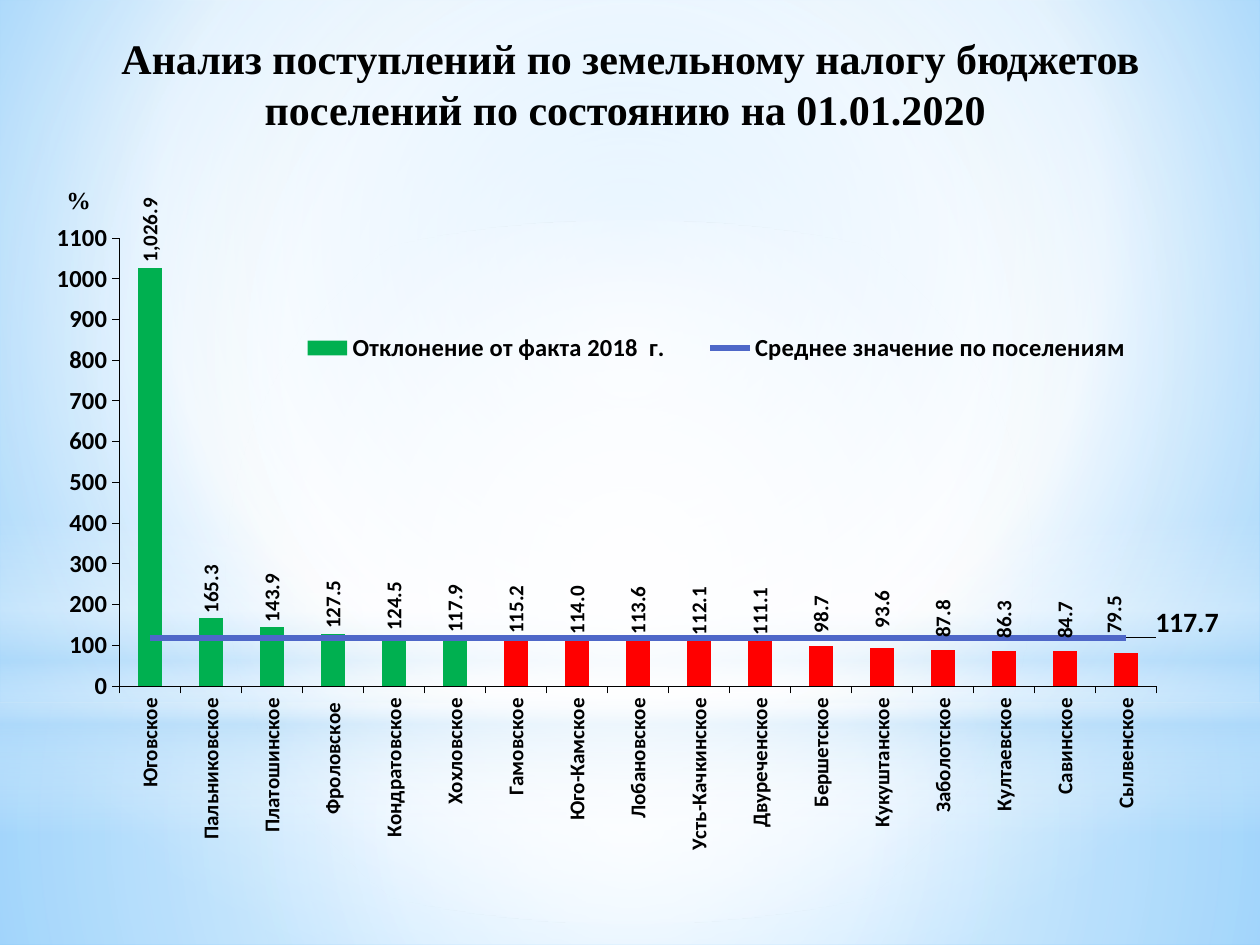
"""Build the slide on land tax receipts of settlement budgets."""
from copy import deepcopy
from dataclasses import dataclass

from lxml import etree
from pptx import Presentation
from pptx import util as u
from pptx.chart import data
from pptx.dml.color import RGBColor
from pptx.enum import chart as ch, shapes, text
from pptx.oxml import parse_xml
from pptx.oxml.ns import nsdecls, qn


@dataclass(frozen=True)
class Theme:
    ink: str = "000000"
    good: str = "00B050"
    bad: str = "FF0000"
    mean: str = "4E67C8"
    sky: str = "B4DCFA"
    white: str = "FFFFFF"
    edge: str = "9ED5FF"
    deep: str = "5BB9FF"
    serif: str = "Times New Roman"
    sans: str = "Calibri"
    head: int = 24
    big: int = 16
    mid: int = 14
    small: int = 12


T = Theme()
MEAN = 117.7
RATES = {
    "Юговское": 1026.9, "Пальниковское": 165.3, "Платошинское": 143.9,
    "Фроловское ": 127.5, "Кондратовское": 124.5, "Хохловское": 117.9,
    "Гамовское": 115.2, "Юго-Камское": 114, "Лобановское": 113.6,
    "Усть-Качкинское": 112.1, "Двуреченское": 111.1, "Бершетское": 98.7,
    "Кукуштанское": 93.6, "Заболотское": 87.8, "Култаевское": 86.3,
    "Савинское": 84.7, "Сылвенское": 79.5,
}
SHIFTS = {11: (0, -0.01), 12: (0, -0.02), 13: (0, -0.01), 14: (0, -0.01),
          15: (0, -0.01), 16: (-0.01, -0.02)}


def style(font, size, name=T.sans):
    font.size, font.name, font.bold = u.Pt(size), name, True
    font.color.rgb = RGBColor.from_string(T.ink)


def write(frame, words, size, name=T.serif, align=text.PP_ALIGN.LEFT):
    frame.word_wrap = True
    frame.vertical_anchor = text.MSO_ANCHOR.TOP
    frame.auto_size = text.MSO_AUTO_SIZE.NONE
    para = frame.paragraphs[0]
    para.alignment = align
    run = para.add_run()
    run.text = words
    style(run.font, size, name)


def blend(root, stops, focus=(50, 50, 50, 50), angle=None):
    """Swap the solid fill under root for a gradient of (place, colour, alpha)."""
    marks = "".join(
        f'<a:gs pos="{pos * 1000}"><a:srgbClr val="{tone}">'
        f'<a:alpha val="{alpha * 1000}"/></a:srgbClr></a:gs>'
        for pos, tone, alpha in stops)
    if angle is None:
        rect = " ".join(f'{k}="{v * 1000}"' for k, v in zip("ltrb", focus))
        way = f'<a:path path="circle"><a:fillToRect {rect}/></a:path>'
    else:
        way = f'<a:lin ang="{angle * 60000}" scaled="0"/>'
    old = next(root.iter(qn("a:solidFill")))
    old.getparent().replace(old, parse_xml(
        f'<a:gradFill {nsdecls("a")} rotWithShape="1">'
        f'<a:gsLst>{marks}</a:gsLst>{way}</a:gradFill>'))


def layout(x, y, w=None, h=None, inner=False):
    """Return a manual chart layout, or a plain offset when no size is given."""
    parts = '<c:layoutTarget val="inner"/>' if inner else ""
    if w:
        parts += '<c:xMode val="edge"/><c:yMode val="edge"/>'
    parts += f'<c:x val="{x}"/><c:y val="{y}"/>'
    if w:
        parts += f'<c:w val="{w}"/><c:h val="{h}"/>'
    return parse_xml(f'<c:layout {nsdecls("c")}><c:manualLayout>{parts}'
                     '</c:manualLayout></c:layout>')


def turn(root):
    body = next(root.iter(qn("a:bodyPr")))
    body.set("rot", "-5400000")
    body.set("vert", "horz")


def clear(root, tag):
    for old in root.findall(qn(tag)):
        root.remove(old)


def shift(ser, moves):
    """Give single labels of a series their own offset."""
    base = ser.find(qn("c:dLbls"))
    kids = [k for k in base if k.tag != qn("c:showLeaderLines")]
    for rank, (spot, move) in enumerate(moves.items()):
        label = parse_xml(f'<c:dLbl {nsdecls("c")}><c:idx val="{spot}"/></c:dLbl>')
        label.append(layout(*move))
        label.extend([deepcopy(k) for k in kids])
        base.insert(rank, label)


def split(area):
    """Move the second bar series to a line plot on the same axes."""
    bars = area.find(qn("c:barChart"))
    ser = bars.findall(qn("c:ser"))[1]
    clear(ser, "c:invertIfNegative")
    line = parse_xml(f'<c:lineChart {nsdecls("c")}><c:grouping val="standard"/>'
                     '<c:varyColors val="0"/></c:lineChart>')
    line.append(ser)
    etree.SubElement(line, qn("c:marker")).set("val", "1")
    line.extend([deepcopy(a) for a in bars.findall(qn("c:axId"))])
    bars.addnext(line)


class Deck:
    """Hold the style and the current slide."""

    def __init__(self, theme):
        self.t = theme
        self.prs = Presentation()
        self.prs.slide_width, self.prs.slide_height = u.Cm(25.4), u.Cm(19.05)
        self.page = self.prs.slides.add_slide(self.prs.slide_layouts[5])

    def ground(self, stops, focus):
        self.page.background.fill.solid()
        self.page.background.fill.fore_color.rgb = RGBColor.from_string(self.t.white)
        blend(self.page.element, stops, focus)

    def glow(self, kind, top, high, stops, angle=None):
        shape = self.page.shapes.add_shape(
            kind, 0, u.Cm(top), self.prs.slide_width, u.Cm(high))
        shape.shadow.inherit = False
        shape.line.fill.background()
        shape.fill.solid()
        shape.fill.fore_color.rgb = RGBColor.from_string(self.t.white)
        blend(shape.element, stops, angle=angle)

    def title(self, words, *box):
        head = self.page.shapes.title
        head.left, head.top, head.width, head.height = map(u.Cm, box)
        write(head.text_frame, words, self.t.head, align=text.PP_ALIGN.CENTER)
        self.page.shapes.element.append(head.element)

    def note(self, words, *box):
        frame = self.page.shapes.add_textbox(*map(u.Cm, box)).text_frame
        write(frame, words, self.t.mid)

    def axis(self, axis, size):
        axis.has_major_gridlines = False
        axis.major_tick_mark = ch.XL_TICK_MARK.OUTSIDE
        axis.minor_tick_mark = ch.XL_TICK_MARK.NONE
        axis.format.line.width = u.Pt(0.25)
        axis.format.line.color.rgb = RGBColor.from_string(self.t.ink)
        style(axis.tick_labels.font, size)

    def labels(self, ser, size, place):
        tags = ser.data_labels
        tags.show_value = True
        tags.number_format, tags.number_format_is_linked = "#,##0.0", False
        tags.position = place
        style(tags.font, size)
        return tags

    def chart(self, rates, mean, *box):
        info = data.CategoryChartData(number_format="0.0")
        info.categories = list(rates)
        info.add_series("Отклонение от факта 2018  г. ", rates.values())
        info.add_series("Среднее значение по поселениям", [mean] * len(rates))
        chart = self.page.shapes.add_chart(
            ch.XL_CHART_TYPE.COLUMN_CLUSTERED, *map(u.Cm, box), info).chart
        chart.has_title = False
        style(chart.font, self.t.mid)
        area = next(chart.element.iter(qn("c:plotArea")))
        clear(area, "c:layout")
        area.insert(0, layout(0.07, 0.08, 0.86, 0.61, inner=True))
        split(area)

        self.axis(chart.category_axis, self.t.small)
        turn(chart.category_axis.tick_labels._element)
        rise = chart.value_axis
        self.axis(rise, self.t.mid)
        rise.minimum_scale, rise.maximum_scale, rise.major_unit = 0, 1100, 100
        rise.tick_labels.number_format = "0"
        rise.tick_labels.number_format_is_linked = False

        bars, line = chart.plots
        bars.gap_width, bars.vary_by_categories = 150, False
        ser = bars.series[0]
        ser.invert_if_negative = False
        ser.format.fill.solid()
        ser.format.fill.fore_color.rgb = RGBColor.from_string(self.t.good)
        for spot, rate in enumerate(rates.values()):
            if rate < mean:
                fill = ser.points[spot].format.fill
                fill.solid()
                fill.fore_color.rgb = RGBColor.from_string(self.t.bad)
        self.labels(ser, self.t.small, ch.XL_LABEL_POSITION.OUTSIDE_END)
        turn(ser._element.find(qn("c:dLbls")))
        shift(ser._element, SHIFTS)

        ser = line.series[0]
        ser.smooth = False
        ser.marker.style = ch.XL_MARKER_STYLE.NONE
        ser.format.line.width = u.Pt(3)
        ser.format.line.color.rgb = RGBColor.from_string(self.t.mean)
        tags = self.labels(ser, self.t.big, ch.XL_LABEL_POSITION.RIGHT)
        shift(ser._element, {len(rates) - 1: (0.02, -0.02)})
        tags.show_value = False

        chart.has_legend = True
        key = chart.legend
        key.position, key.include_in_layout = ch.XL_LEGEND_POSITION.TOP, False
        style(key.font, self.t.mid)
        clear(key._element, "c:layout")
        key._element.find(qn("c:legendPos")).addnext(layout(0.2, 0.2, 0.73, 0.06))


def main():
    deck = Deck(T)
    box, oval = shapes.MSO_SHAPE.RECTANGLE, shapes.MSO_SHAPE.OVAL
    w, s = T.white, T.sky
    deck.ground([(0, T.edge, 100), (60, w, 100), (100, T.deep, 100)], (20, 10, 20, 60))
    deck.glow(box, 14.17, 4.88, [(0, w, 91), (37, w, 76), (100, s, 79)])
    deck.glow(box, 0, 14.17, [(0, w, 89), (48, w, 62), (100, s, 79)])
    deck.glow(box, 10.46, 6.35, [(0, w, 0), (29, w, 30), (45, s, 40), (55, w, 26),
                                 (65, s, 60), (100, w, 0)], angle=90)
    deck.glow(oval, 4.45, 14.17, [(0, w, 100), (56, w, 0)])
    deck.title("Анализ поступлений по земельному налогу бюджетов поселений "
               "по состоянию на 01.01.2020 ", 0.71, 0.53, 24, 1.37)
    deck.chart(RATES, MEAN, 0.71, 3.61, 24.31, 14.81)
    deck.note("%", 1.09, 3.61, 1.19, 0.86)
    deck.prs.save("out.pptx")


if __name__ == "__main__":
    main()
